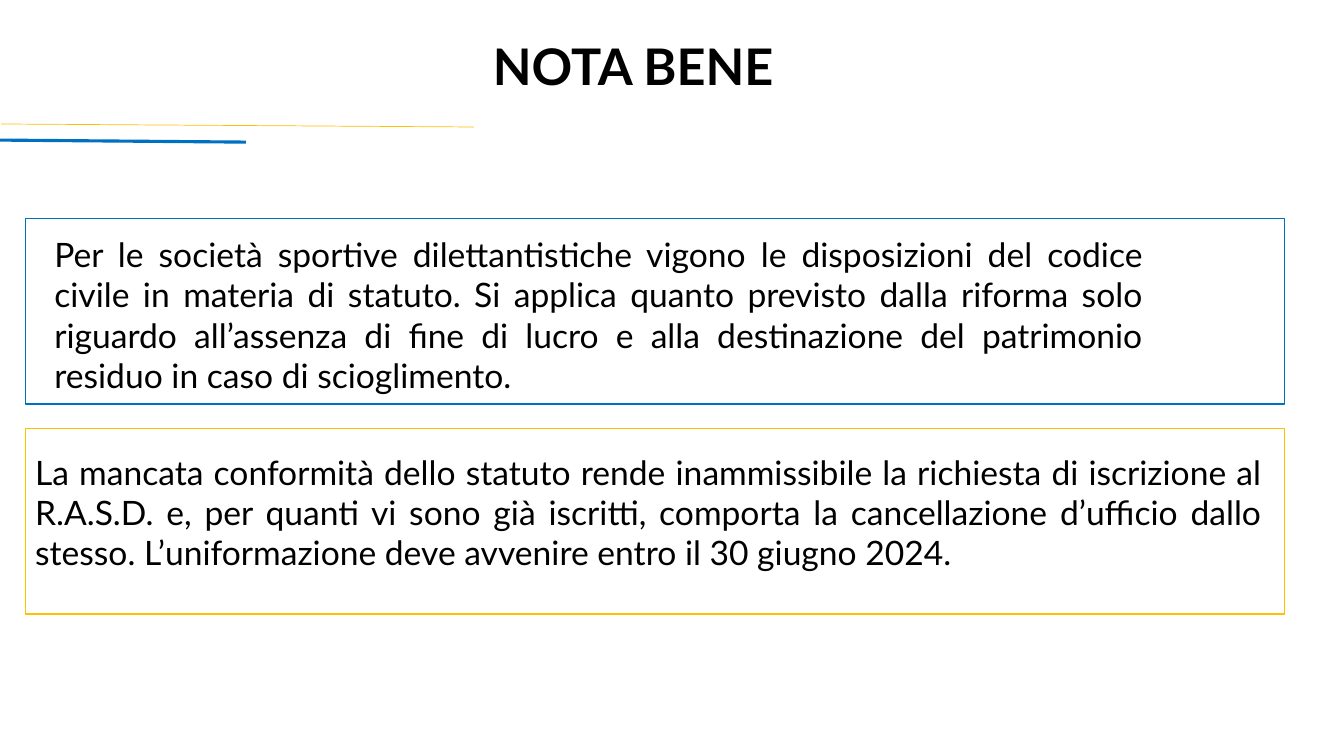
from dataclasses import dataclass

from lxml import etree
from pptx import Presentation
from pptx.dml.color import RGBColor
from pptx.enum import shapes, text
from pptx.oxml.ns import qn
from pptx.util import Inches, Pt


@dataclass(frozen=True)
class Theme:
    font: str = "Lato"
    ink: str = "000000"
    blue: str = "0070C0"
    gold: str = "FFC000"
    title: int = 36
    body: int = 24


THEME = Theme()
ALIGN = text.PP_ALIGN
RULES = (
    "Per le società sportive dilettantistiche vigono le disposizioni del codice "
    "civile in materia di statuto. Si applica quanto previsto dalla riforma solo "
    "riguardo all’assenza di fine di lucro e alla destinazione del patrimonio "
    "residuo in caso di scioglimento."
)
DEADLINE = (
    "La mancata conformità dello statuto rende inammissibile la richiesta di "
    "iscrizione al R.A.S.D. e, per quanti vi sono già iscritti, comporta la "
    "cancellazione d’ufficio dallo stesso. L’uniformazione deve avvenire entro "
    "il 30 giugno 2024."
)


def add_text(slide, words, area, size, align, bold=False):
    """Add a wrapped text box at area, given as left, top, width, height."""
    box = slide.shapes.add_textbox(*map(Inches, area))
    frame = box.text_frame
    frame.word_wrap = True
    frame.auto_size = text.MSO_AUTO_SIZE.SHAPE_TO_FIT_TEXT
    frame.text = words
    para = frame.paragraphs[0]
    para.alignment = align
    font = para.runs[0].font
    font.name, font.size, font.bold = THEME.font, Pt(size), bold
    font.color.rgb = RGBColor.from_string(THEME.ink)


def set_line(line, color, width):
    """Give a line its colour and its width in points."""
    line.color.rgb = RGBColor.from_string(color)
    line.width = Pt(width)


def add_frame(slide, top, color):
    """Add an unfilled frame around a note."""
    frame = slide.shapes.add_shape(
        shapes.MSO_SHAPE.RECTANGLE,
        Inches(0.25), Inches(top), Inches(12.49), Inches(1.84),
    )
    frame.shadow.inherit = False
    frame.fill.background()
    set_line(frame.line, color, 1)


def add_stroke(slide, ends, color, width):
    """Add a straight line between ends, given as x1, y1, x2, y2."""
    stroke = slide.shapes.add_connector(
        shapes.MSO_CONNECTOR.STRAIGHT, *map(Inches, ends)
    )
    set_line(stroke.line, color, width)
    etree.SubElement(stroke._element.spPr, qn("a:effectLst"))


def main():
    """Build the slide and save it."""
    deck = Presentation()
    deck.slide_width, deck.slide_height = Inches(13.33), Inches(7.5)
    slide = deck.slides.add_slide(deck.slide_layouts[6])
    add_text(slide, "NOTA BENE", (0.88, 0.3, 10.8, 0.71),
             THEME.title, ALIGN.CENTER, bold=True)
    add_text(slide, RULES, (0.44, 2.27, 10.99, 1.99), THEME.body, ALIGN.JUSTIFY)
    add_text(slide, DEADLINE, (0.25, 4.43, 12.36, 1.83), THEME.body, ALIGN.JUSTIFY)
    add_frame(slide, 2.17, THEME.blue)
    add_stroke(slide, (0.01, 1.23, 4.7, 1.26), THEME.gold, 0.5)
    add_stroke(slide, (0, 1.39, 2.44, 1.41), THEME.blue, 2.25)
    add_frame(slide, 4.25, THEME.gold)
    deck.save("out.pptx")


if __name__ == "__main__":
    main()
